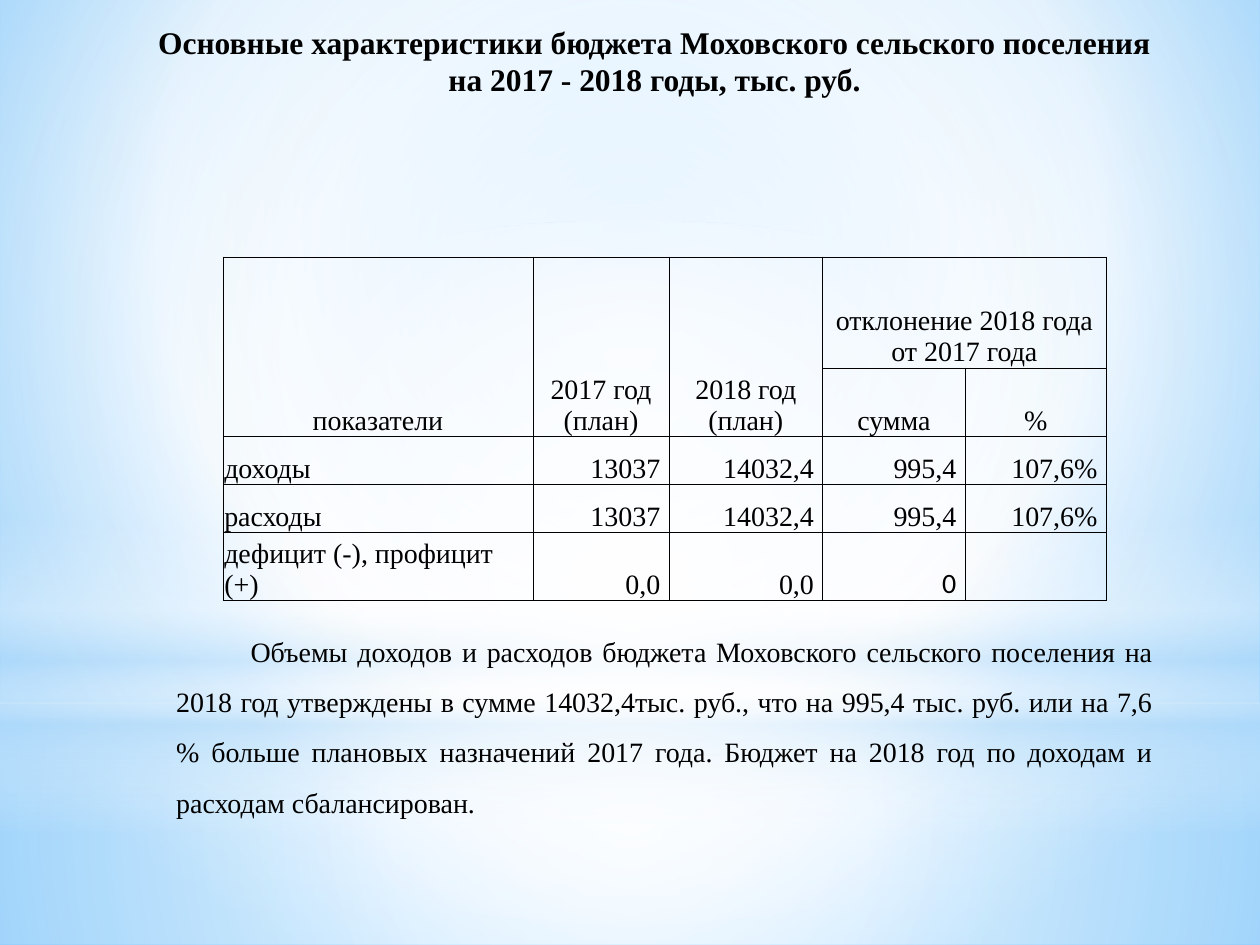
from lxml import etree
from pptx import Presentation, util as u
from pptx.dml.color import RGBColor
from pptx.enum import shapes as sh, text as tx
from pptx.oxml.ns import qn

BLACK = RGBColor(0, 0, 0)
WHITE = RGBColor(255, 255, 255)
SKY = RGBColor(0x9E, 0xD5, 0xFF)
BLUE = RGBColor(0x5B, 0xB9, 0xFF)
PALE = RGBColor(0xB4, 0xDC, 0xFA)
SERIF = "Times New Roman"
MID = (50, 50, 50, 50)
RECT, OVAL = sh.MSO_SHAPE.RECTANGLE, sh.MSO_SHAPE.OVAL
LEFT, RIGHT = tx.PP_ALIGN.LEFT, tx.PP_ALIGN.RIGHT
CENTER, FULL = tx.PP_ALIGN.CENTER, tx.PP_ALIGN.JUSTIFY

BACK = [(0, SKY, 100), (60, WHITE, 100), (100, BLUE, 100)]
GLOWS = [
    (RECT, (0, 401.76, 720, 138.24),
     [(0, WHITE, 91), (37, WHITE, 76), (100, PALE, 79)], MID),
    (RECT, (0, 0, 720, 401.76),
     [(0, WHITE, 89), (48, WHITE, 62), (100, PALE, 79)], MID),
    (RECT, (0, 296.64, 720, 180),
     [(0, WHITE, 0), (29, WHITE, 30), (45, PALE, 40),
      (55, WHITE, 26), (65, PALE, 60), (100, WHITE, 0)], None),
    (OVAL, (0, 126, 720, 401.76),
     [(0, WHITE, 100), (56, WHITE, 0)], MID),
]
TITLE = ("Основные характеристики бюджета Моховского сельского поселения "
         "на 2017 - 2018 годы, тыс. руб.")
NOTE = ("Объемы доходов и расходов бюджета Моховского сельского поселения на "
        "2018 год утверждены в сумме 14032,4тыс. руб., что на 995,4 тыс. руб. "
        "или на 7,6 % больше плановых назначений 2017 года. Бюджет на 2018 год "
        "по доходам и расходам сбалансирован.")
COLS = (177.12, 77.76, 87.84, 81.36, 80.64)
ROWS = (63.36, 27.36, 27.36, 27.36, 27.36)
DATA = [
    ["показатели", "2017 год (план)", "2018 год (план)",
     "отклонение 2018 года от 2017 года", ""],
    ["", "", "", "сумма", "%"],
    ["доходы", "13037", "14032,4", "995,4", "107,6%"],
    ["расходы", "13037", "14032,4", "995,4", "107,6%"],
    ["дефицит (-), профицит (+)", "0,0", "0,0", "0", ""],
]
SPANS = [(0, 0, 1, 0), (0, 1, 1, 1), (0, 2, 1, 2), (0, 3, 0, 4)]


def put(obj, vals):
    for key, val in vals.items():
        setattr(obj, key, val)


def node(base, tag, **attrs):
    return etree.SubElement(base, qn(tag), {k: str(v) for k, v in attrs.items()})


def blend(fill, root, stops, focus):
    fill.gradient()
    grad = next(root.iter(qn("a:gradFill")))
    for kid in list(grad):
        grad.remove(kid)
    group = node(grad, "a:gsLst")
    for pos, color, alpha in stops:
        stop = node(group, "a:gs", pos=pos * 1000)
        tint = node(stop, "a:srgbClr", val=color)
        if alpha < 100:
            node(tint, "a:alpha", val=alpha * 1000)
    if focus:
        way = node(grad, "a:path", path="circle")
        sides = {k: v * 1000 for k, v in zip("ltrb", focus)}
        node(way, "a:fillToRect", **sides)
    else:
        node(grad, "a:lin", ang=90 * 60000, scaled=0)


def glow(slide, kind, box, stops, focus):
    shape = slide.shapes.add_shape(kind, *map(u.Pt, box))
    shape.shadow.inherit = False
    shape.line.fill.background()
    blend(shape.fill, shape.element, stops, focus)


def write(para, words, size, form, face=SERIF, bold=False):
    put(para, form)
    run = para.add_run()
    run.text = words
    put(run.font, {"name": face, "size": u.Pt(size), "bold": bold})
    run.font.color.rgb = BLACK


def label(slide, box, words, size, form, bold=False):
    frame = slide.shapes.add_textbox(*map(u.Pt, box)).text_frame
    put(frame, {"word_wrap": True,
                "auto_size": tx.MSO_AUTO_SIZE.SHAPE_TO_FIT_TEXT})
    write(frame.paragraphs[0], words, size, form, bold=bold)
    return frame.paragraphs[0]


def edge(cell):
    props = cell._tc.get_or_add_tcPr()
    for side in "LRTB":
        line = node(props, f"a:ln{side}", w=u.Pt(0.5))
        node(node(line, "a:solidFill"), "a:srgbClr", val=BLACK)


def style(cell, words, row, col):
    edge(cell)
    cell.fill.background()
    value = row > 1 and col > 0
    pad = u.Pt(5.04 if value else 0.72)
    put(cell, {"margin_left": pad, "margin_right": pad,
               "margin_top": u.Pt(0 if value else 0.72), "margin_bottom": 0,
               "vertical_anchor": tx.MSO_ANCHOR.BOTTOM})
    if not words:
        return
    form = {"alignment": CENTER if row < 2 else RIGHT if col else LEFT}
    if value:
        form["line_spacing"] = 1.15
    face = "Calibri" if words == "0" else SERIF
    write(cell.text_frame.paragraphs[0], words, 16, form, face)


def grid(slide, left, top):
    size = map(u.Pt, (left, top, sum(COLS), sum(ROWS)))
    table = slide.shapes.add_table(len(ROWS), len(COLS), *size).table
    put(table, {"first_row": False, "horz_banding": False})
    for col, width in zip(table.columns, COLS):
        col.width = u.Pt(width)
    for row, height in zip(table.rows, ROWS):
        row.height = u.Pt(height)
    for r, line in enumerate(DATA):
        for c, words in enumerate(line):
            style(table.cell(r, c), words, r, c)
    for r, c, down, over in SPANS:
        table.cell(r, c).merge(table.cell(down, over))


def main():
    deck = Presentation()
    put(deck, {"slide_width": u.Pt(720), "slide_height": u.Pt(540)})
    slide = deck.slides.add_slide(deck.slide_layouts[6])
    blend(slide.background.fill, slide.element, BACK, (20, 10, 20, 60))
    for item in GLOWS:
        glow(slide, *item)
    label(slide, (82.08, 9.36, 583.92, 51.12), TITLE, 18,
          {"alignment": CENTER}, bold=True)
    para = label(slide, (93.6, 349.2, 572.4, 123.84), NOTE, 16,
                 {"alignment": FULL, "line_spacing": 1.5})
    para._p.get_or_add_pPr().set("indent", str(u.Pt(42.5)))
    grid(slide, 127.44, 146.88)
    deck.save("out.pptx")


if __name__ == "__main__":
    main()
